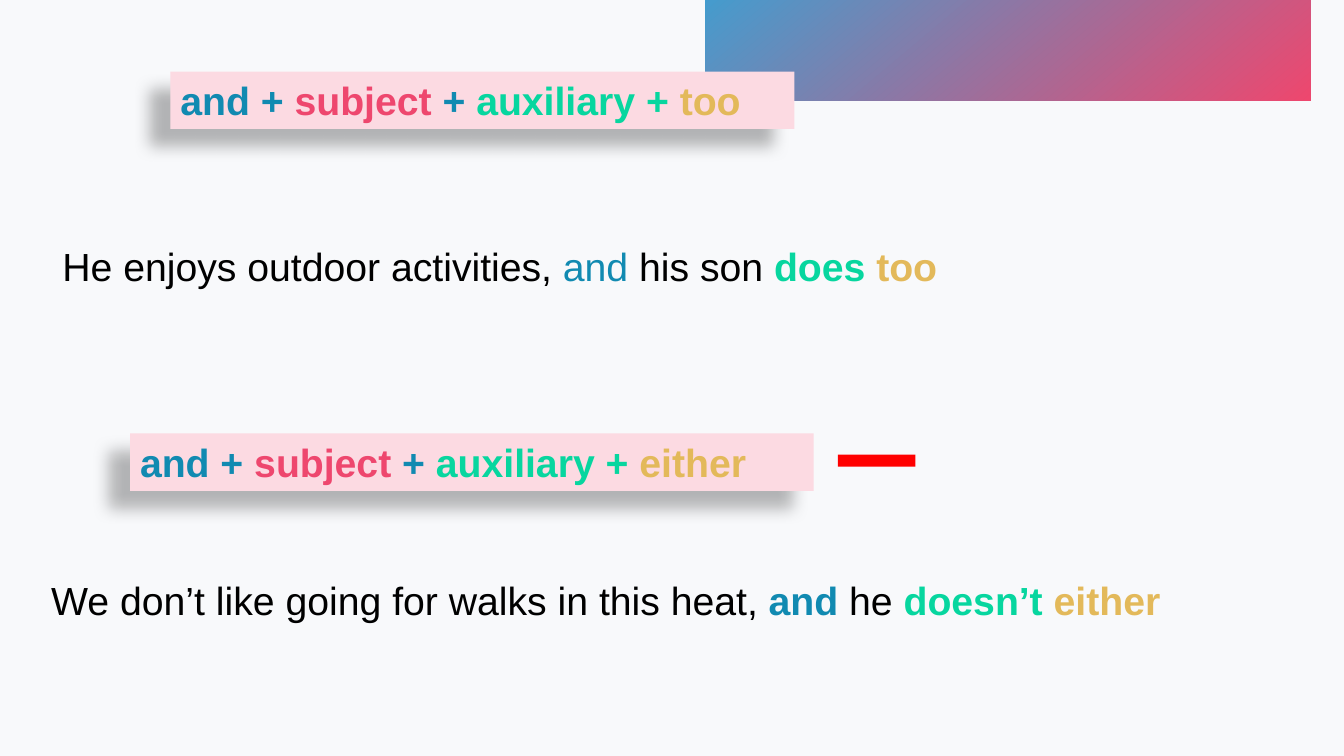
from lxml import etree
from pptx import Presentation
from pptx.dml.color import RGBColor
from pptx.enum.shapes import MSO_SHAPE
from pptx.enum.text import MSO_ANCHOR, MSO_AUTO_SIZE, PP_ALIGN
from pptx.oxml.ns import qn
from pptx.util import Inches, Pt

RECTANGLE = MSO_SHAPE.RECTANGLE
LEFT = PP_ALIGN.LEFT
TOP = MSO_ANCHOR.TOP
GROW = MSO_AUTO_SIZE.SHAPE_TO_FIT_TEXT

BLACK, BLUE, PINK, GREEN, GOLD = "000000", "118AB1", "EE476E", "07D69F", "E3B95A"
BACKGROUND, PANEL, RED, CYAN = "F8F9FB", "FCDAE2", "FF0000", "16B3E8"
TEXT_HEIGHT = 0.57
CURVE_STEPS = 16

WAVE_START = (7.79, 1.22)
WAVE_LEFT_EDGE = [
    ((7.72, 1.22), (7.65, 1.22), (7.59, 1.21)),
    ((7.09, 1.14), (7.04, 0.68), (6.67, 0.52)),
    ((6.3, 0.36), (5.71, 0.37), (5.38, 0.25)),
    ((5.26, 0.21), (5.13, 0.13), (5.02, 0.06)),
]
WAVE_TOP = [(4.94, 0), (13.33, 0), (13.29, 0.06)]
WAVE_RIGHT_EDGE = [
    ((13.14, 0.26), (12.9, 0.56), (12.43, 0.69)),
    ((11.8, 0.86), (10.45, 0.82), (9.64, 0.91)),
    ((8.94, 0.99), (8.27, 1.21), WAVE_START),
]


def rgb(color):
    return RGBColor.from_string(color)


def fill_plain(shape, color):
    shape.shadow.inherit = False
    shape.fill.solid()
    shape.fill.fore_color.rgb = rgb(color)
    shape.line.fill.background()


def add_bar(slide, left, top, width, height, color):
    shape = slide.shapes.add_shape(
        RECTANGLE, Inches(left), Inches(top), Inches(width), Inches(height))
    fill_plain(shape, color)
    return shape


def add_shadow(shape):
    effects = shape._element.spPr.find(qn("a:effectLst"))
    shadow = etree.SubElement(
        effects, qn("a:outerShdw"), blurRad=str(Pt(11.8)), dist=str(Pt(19.7)),
        dir=str(141 * 60000), algn="ctr", rotWithShape="0")
    color = etree.SubElement(shadow, qn("a:srgbClr"), val=BLACK)
    etree.SubElement(color, qn("a:alpha"), val="28000")


def write_runs(shape, pieces):
    text_frame = shape.text_frame
    text_frame.word_wrap = True
    text_frame.auto_size = GROW
    text_frame.vertical_anchor = TOP
    paragraph = text_frame.paragraphs[0]
    paragraph.alignment = LEFT
    for text, color, bold in pieces:
        run = paragraph.add_run()
        run.text = text
        run.font.name = "Arial"
        run.font.size = Pt(28)
        run.font.bold = bold
        run.font.color.rgb = rgb(color)


def add_formula(slide, left, top, width, ending):
    panel = add_bar(slide, left, top, width, TEXT_HEIGHT, PANEL)
    add_shadow(panel)
    write_runs(panel, [
        ("and + ", BLUE, True), ("subject", PINK, True), (" + ", BLUE, True),
        ("auxiliary + ", GREEN, True), (ending, GOLD, True)])


def add_sentence(slide, left, top, width, pieces):
    box = slide.shapes.add_textbox(
        Inches(left), Inches(top), Inches(width), Inches(TEXT_HEIGHT))
    write_runs(box, pieces)


def curve_points(start, curves):
    points = []
    for first, second, end in curves:
        for step in range(1, CURVE_STEPS + 1):
            t = step / CURVE_STEPS
            u = 1 - t
            points.append(tuple(
                u**3 * a + 3 * u**2 * t * b + 3 * u * t**2 * c + t**3 * d
                for a, b, c, d in zip(start, first, second, end)))
        start = end
    return points


def add_wave(slide):
    points = (curve_points(WAVE_START, WAVE_LEFT_EDGE) + WAVE_TOP
              + curve_points(WAVE_TOP[-1], WAVE_RIGHT_EDGE))
    builder = slide.shapes.build_freeform(*WAVE_START, scale=Inches(1))
    builder.add_line_segments(points, close=True)
    wave = builder.convert_to_shape()
    fill_plain(wave, CYAN)
    wave.fill.gradient()
    wave.fill.gradient_angle = 310
    for stop, color in zip(wave.fill.gradient_stops, (CYAN, PINK)):
        stop.color.rgb = rgb(color)


def main():
    presentation = Presentation()
    presentation.slide_width = Inches(13.33)
    presentation.slide_height = Inches(7.5)
    slide = presentation.slides.add_slide(presentation.slide_layouts[6])
    slide.background.fill.solid()
    slide.background.fill.fore_color.rgb = rgb(BACKGROUND)

    add_wave(slide)
    add_formula(slide, 1.69, 0.71, 6.19, "too")
    add_sentence(slide, 0.52, 2.35, 10.62, [
        ("He enjoys outdoor activities, ", BLACK, False), ("and", BLUE, False),
        (" his son ", BLACK, False), ("does ", GREEN, True), ("too", GOLD, True)])
    add_formula(slide, 1.29, 4.3, 6.78, "either")
    add_sentence(slide, 0.41, 5.67, 12.52, [
        ("We don’t like going for walks in this heat, ", BLACK, False),
        ("and", BLUE, True), (" he ", BLACK, False),
        ("doesn’t ", GREEN, True), ("either", GOLD, True)])
    add_bar(slide, 8.31, 4.51, 0.77, 0.12, RED)
    presentation.save("out.pptx")


if __name__ == "__main__":
    main()
